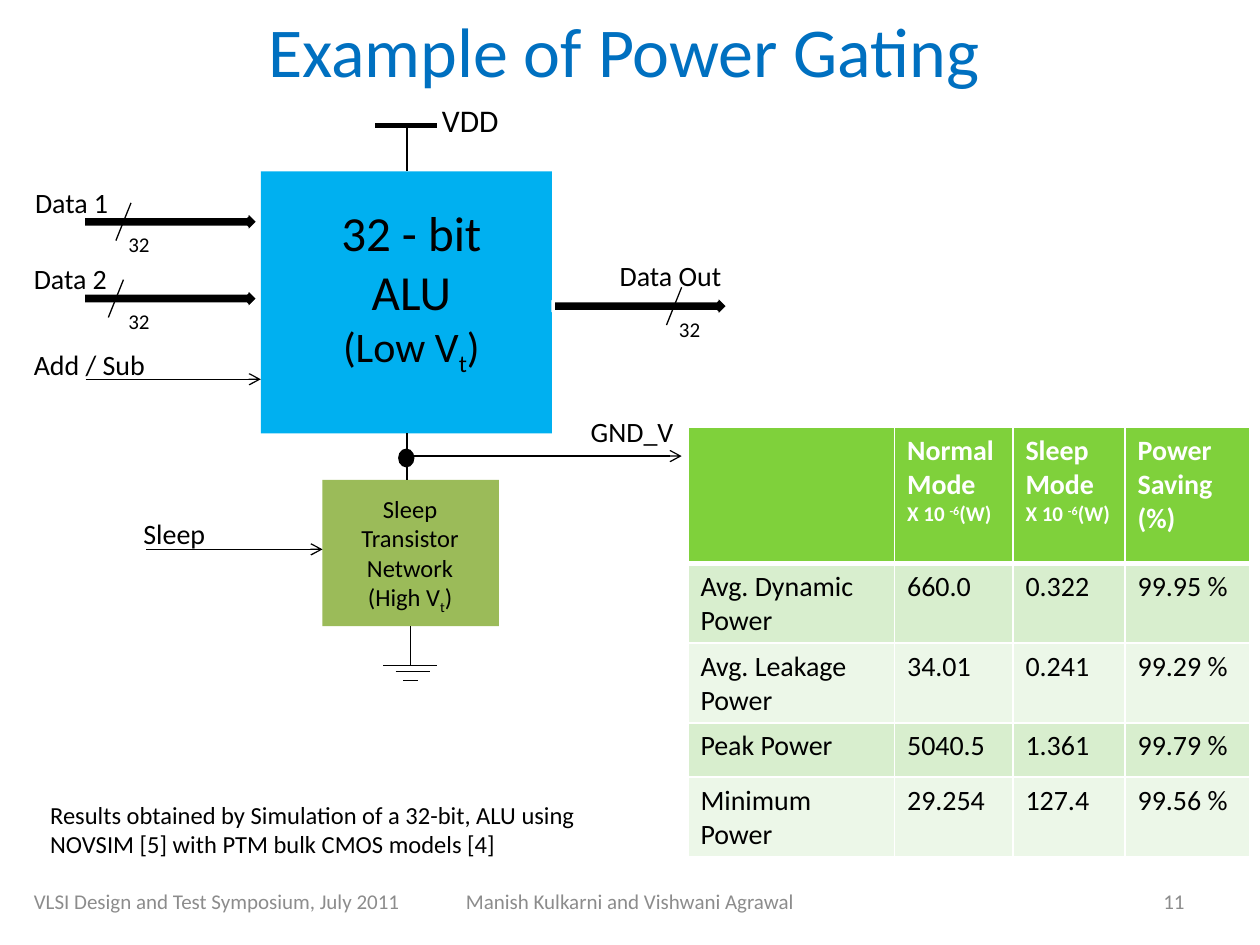
from dataclasses import dataclass

import lxml.etree
import pptx
import pptx.dml.color
import pptx.enum.shapes
import pptx.enum.text
import pptx.oxml.ns
import pptx.util

COLORS = {"title": "0070C0", "alu": "00B0F0", "sleep": "9BBB59", "ink": "000000",
          "paper": "FFFFFF", "footer": "8C8C8C", "header": "7FD13B",
          "odd": "D8EECE", "even": "ECF7E8"}
FONT = "Calibri"
COLUMNS, ROWS = 100, 75
LEFT, CENTER, RIGHT = (pptx.enum.text.PP_ALIGN.LEFT, pptx.enum.text.PP_ALIGN.CENTER,
                       pptx.enum.text.PP_ALIGN.RIGHT)
TOP, MIDDLE = pptx.enum.text.MSO_ANCHOR.TOP, pptx.enum.text.MSO_ANCHOR.MIDDLE
SHAPE = pptx.enum.shapes.MSO_SHAPE

deck = pptx.Presentation()
deck.slide_width, deck.slide_height = pptx.util.Inches(10), pptx.util.Inches(7.5)
page = deck.slides.add_slide(deck.slide_layouts[5])


@dataclass
class Span:
    text: str
    size: float
    baseline: int = 0


@dataclass
class Label:
    text: str
    column: float
    row: float
    width: float = 12.7
    height: float = 3.7
    size: float = 16
    align: int = LEFT
    anchor: int = TOP
    color: str = "ink"


@dataclass
class Bus:
    """A 32-bit data arrow; its label, slash and width mark follow its row."""
    name: str
    column: float
    row: float
    name_column: float
    name_rise: float
    slash_column: float
    mark_column: float


@dataclass
class Wire:
    start: tuple[float, float]
    end: tuple[float, float]
    weight: float = 0.75
    arrow: bool = False


def across(columns: float) -> int:
    return round(deck.slide_width * columns / COLUMNS)


def down(rows: float) -> int:
    return round(deck.slide_height * rows / ROWS)


def area(column: float, row: float, width: float, height: float) -> tuple[int, ...]:
    return across(column), down(row), across(width), down(height)


def rgb(name: str) -> pptx.dml.color.RGBColor:
    return pptx.dml.color.RGBColor.from_string(COLORS[name])


def write(frame, lines: list[list[Span]], color: str = "ink", align: int = LEFT,
          bold: bool = False) -> None:
    """Fill a text frame with one paragraph per line of spans."""
    for index, spans in enumerate(lines):
        para = frame.add_paragraph() if index else frame.paragraphs[0]
        para.alignment = align
        for span in spans:
            run = para.add_run()
            run.text = span.text
            run.font.name, run.font.size = FONT, pptx.util.Pt(span.size)
            run.font.bold, run.font.color.rgb = bold, rgb(color)
            if span.baseline:
                run._r.get_or_add_rPr().set("baseline", str(span.baseline * 1000))


def draw_text(place: tuple[int, ...], lines: list[list[Span]], color: str = "ink",
              align: int = LEFT, anchor: int = TOP) -> None:
    frame = page.shapes.add_textbox(*place).text_frame
    frame.word_wrap, frame.vertical_anchor = True, anchor
    write(frame, lines, color, align)


def draw_label(label: Label) -> None:
    draw_text(area(label.column, label.row, label.width, label.height),
              [[Span(label.text, label.size)]], label.color, label.align, label.anchor)


def draw_shape(kind: int, place: tuple[int, ...], fill: str, line: str = "") -> None:
    shape = page.shapes.add_shape(kind, *place)
    shape.shadow.inherit = False
    shape.fill.solid()
    shape.fill.fore_color.rgb = rgb(fill)
    if line:
        shape.line.color.rgb, shape.line.width = rgb(line), pptx.util.Pt(2)
    else:
        shape.line.fill.background()


def draw_wire(wire: Wire) -> None:
    (column, row), (end_column, end_row) = wire.start, wire.end
    line = page.shapes.add_connector(pptx.enum.shapes.MSO_CONNECTOR.STRAIGHT, across(column),
                                     down(row), across(end_column), down(end_row))
    line.line.color.rgb, line.line.width = rgb("ink"), pptx.util.Pt(wire.weight)
    if wire.arrow:
        tail = lxml.etree.SubElement(line.line._get_or_add_ln(), pptx.oxml.ns.qn("a:tailEnd"))
        tail.set("type", "arrow")
    lxml.etree.SubElement(line._element.spPr, pptx.oxml.ns.qn("a:effectLst"))


def draw_bus(bus: Bus) -> None:
    draw_shape(SHAPE.RIGHT_ARROW, area(bus.column, bus.row, 13.9, 1.8), "ink", "paper")
    draw_wire(Wire((bus.slash_column + 1.2, bus.row - 0.6), (bus.slash_column, bus.row + 2.4)))
    draw_label(Label(bus.name, bus.name_column, bus.row - bus.name_rise))
    draw_label(Label("32", bus.mark_column, bus.row + 1.2, 5, 3, 12))


def set_borders(cell, top: float, bottom: float) -> None:
    properties = cell._tc.get_or_add_tcPr()
    for index, (side, points) in enumerate(zip("LRTB", (1, 1, top, bottom))):
        line = lxml.etree.Element(pptx.oxml.ns.qn(f"a:ln{side}"), w=str(pptx.util.Pt(points)))
        fill = lxml.etree.SubElement(line, pptx.oxml.ns.qn("a:solidFill"))
        lxml.etree.SubElement(fill, pptx.oxml.ns.qn("a:srgbClr"), val=COLORS["paper"])
        properties.insert(index, line)


def draw_table(place: tuple[int, ...], widths: list[float], heights: list[float],
               rows: list[list[list[list[Span]]]]) -> None:
    table = page.shapes.add_table(len(rows), len(widths), *place).table
    for column, width in zip(table.columns, widths):
        column.width = across(width)
    for row, height in zip(table.rows, heights):
        row.height = down(height)
    for r, row in enumerate(rows):
        for c, lines in enumerate(row):
            cell = table.cell(r, c)
            cell.fill.solid()
            cell.fill.fore_color.rgb = rgb("header" if r == 0 else "odd" if r % 2 else "even")
            write(cell.text_frame, lines, "ink" if r else "paper", bold=r == 0)
            set_borders(cell, 3 if r == 1 else 1, 1 if r else 3)


title = page.shapes.title
title.left, title.top, title.width, title.height = area(4.5, 0.1, 90, 9.3)
title.text_frame.vertical_anchor = TOP
write(title.text_frame, [[Span("Example of Power Gating", 40)]], "title", CENTER)

draw_shape(SHAPE.RECTANGLE, area(20.7, 13.6, 23.1, 20.8), "alu")
draw_shape(SHAPE.RECTANGLE, area(25.6, 38.1, 14, 11.6), "sleep")
draw_shape(SHAPE.OVAL, area(31.6, 35.6, 1.3, 1.5), "ink")

for data_bus in (Bus("Data 1", 6.6, 16.7, 1.8, 2.5, 9.2, 9.2),
                 Bus("Data 2", 6.6, 22.8, 1.7, 2.5, 8.6, 9.2),
                 Bus("Data Out", 43.9, 23.4, 48.2, 3.4, 52.9, 52.9)):
    draw_bus(data_bus)

for circuit_wire in (
        Wire((6.8, 30.1), (20.7, 30.1), arrow=True),
        Wire((11.6, 43.6), (25.6, 43.6), arrow=True),
        Wire((32.3, 36.2), (54.1, 36.2), arrow=True),
        Wire((32.3, 9.9), (32.3, 13.6)),
        Wire((29.8, 9.95), (34.7, 9.95), 3),
        Wire((32.3, 34.4), (32.3, 38.1)),
        Wire((32.6, 49.7), (32.6, 52.8)),
        Wire((30.4, 52.8), (34.7, 52.8)),
        Wire((31.4, 53.3), (34.1, 53.3)),
        Wire((32, 54), (33.2, 54))):
    draw_wire(circuit_wire)

draw_text(area(23.3, 15.6, 18.7, 19),
          [[Span("32 - bit", 28)], [Span("ALU", 28)],
           [Span("(Low V", 24), Span("t", 24, -25), Span(")", 24)]], align=CENTER)
draw_text(area(26.2, 38.7, 12.7, 10.3),
          [[Span("Sleep Transistor Network", 14)],
           [Span("(High V", 14), Span("t", 14, -25), Span(")", 14)]], align=CENTER)

for note in (
        Label("Add / Sub", 1.7, 27.1),
        Label("VDD", 34.1, 7.5, height=4, size=18),
        Label("Sleep", 10.4, 40.5),
        Label("GND_V", 45.9, 32.4),
        Label("Results obtained by Simulation of a 32-bit, ALU using NOVSIM [5] "
              "with PTM bulk CMOS models [4]", 3, 63, 49.3, 5.7, 14),
        Label("VLSI Design and Test Symposium, July 2011", 1.7, 69.5, 32.1, 4, 12,
              LEFT, MIDDLE, "footer"),
        Label("Manish Kulkarni and Vishwani Agrawal", 27.5, 69.5, 45, 4, 12,
              CENTER, MIDDLE, "footer"),
        Label("11", 71.7, 69.5, 23.3, 4, 12, RIGHT, MIDDLE, "footer")):
    draw_label(note)

unit = [Span("X 10 ", 12), Span("-6", 12, 30), Span("(W)", 12)]
mode = [Span("Mode", 16)]
header = [[], [[Span("Normal", 16)], mode, unit], [[Span("Sleep", 16)], mode, unit],
          [[Span(word, 16)] for word in ("Power", "Saving", "(%)")]]
results = [("Avg. Dynamic Power", "660.0", "0.322", "99.95 %"),
           ("Avg. Leakage Power", "34.01", "0.241", "99.29 %"),
           ("Peak Power", "5040.5", "1.361", "99.79 %"),
           ("Minimum Power", "29.254", "127.4", "99.56 %")]
draw_table(area(54.6, 33.9, 44.6, 34), [16.4, 9.4, 8.9, 9.9], [10.8, 6.3, 6.3, 4.3, 6.3],
           [header] + [[[[Span(value, 16)]] for value in result] for result in results])

deck.save("out.pptx")
